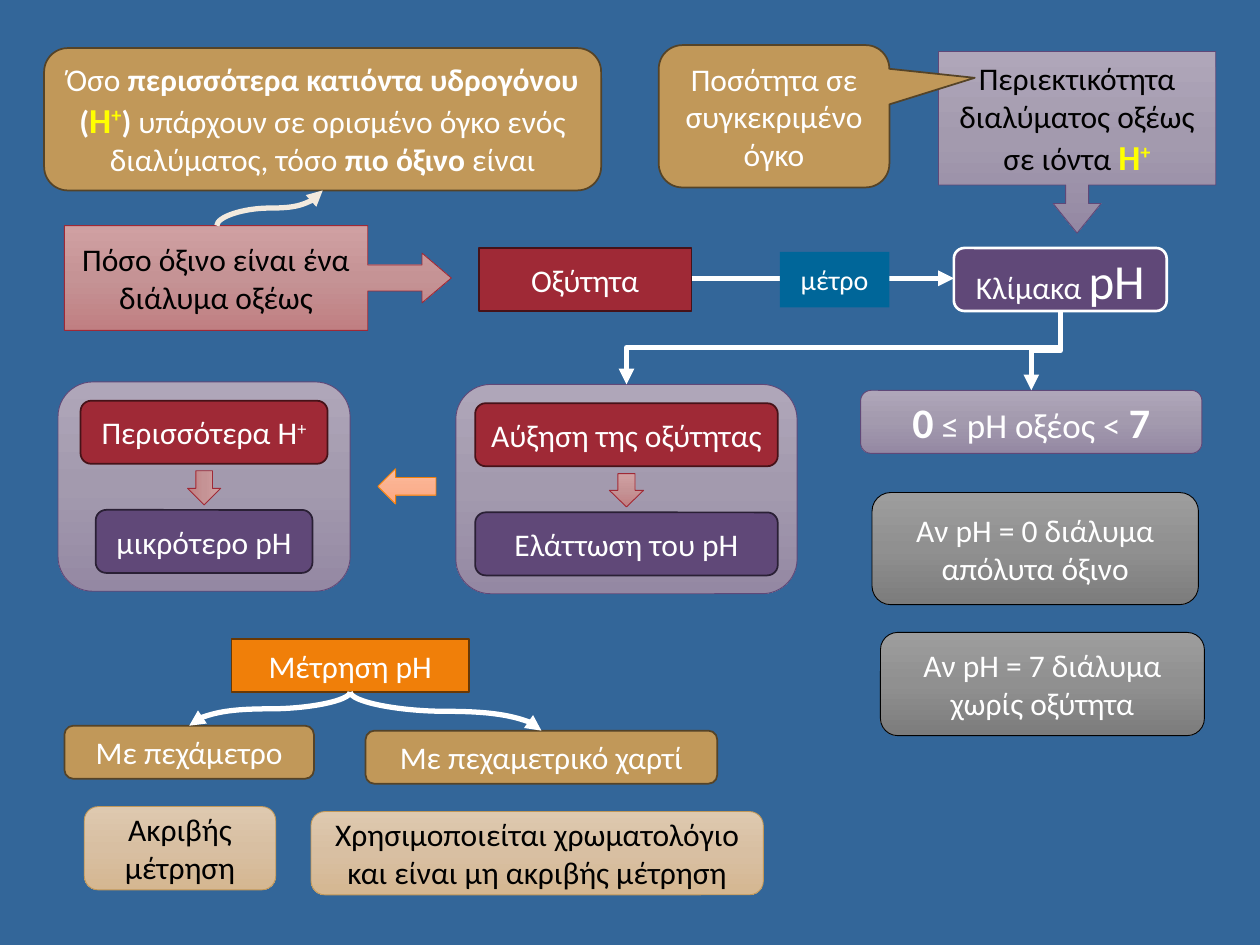
from copy import deepcopy
from dataclasses import dataclass

from lxml.etree import SubElement
from pptx import Presentation
from pptx.dml.color import RGBColor
from pptx.enum.shapes import MSO_CONNECTOR, MSO_SHAPE
from pptx.enum.text import MSO_ANCHOR, PP_ALIGN
from pptx.oxml.ns import qn
from pptx.util import Cm, Pt

WHITE, BLACK, YELLOW = "FFFFFF", "000000", "FFFF00"

# Each style is (fill, line colour, line width); a tuple as fill is a gradient.
RED = ("9F2936", "461218", 1)
PURPLE = ("604878", "2A2035", 1)
OUTLINED_PURPLE = ("604878", WHITE, 1.5)
TAN = ("C19859", "554327", 1)
ORANGE = ("F07F09", "693804", 1)
BLUE = ("006699", None, 0)
PALE_RED = (("D0A0A2", "C59395", "C07F82"), "9F2936", 0.5)
PALE_PURPLE = (("AFA6B9", "A39AAE", "9488A3"), "604878", 0.5)
PALE_ORANGE = (("FDBC9E", "FBB190", "FFA67C"), "F07F09", 0.5)
PALE_TAN = (("DEC9AF", "D8BFA2", "D5B791"), "C19859", 0.5)
GREY = (("9D9D9D", "909090", "7C7C7C"), BLACK, 0.5)


@dataclass
class Box:
    """Place and size in centimetres."""
    left: float
    top: float
    width: float
    height: float

    def inside(self, left, top, width, height):
        return Box(self.left + left, self.top + top, width, height)

    def centred(self, top, width, height):
        return self.inside((self.width - width) / 2, top, width, height)

    @property
    def top_middle(self):
        return self.left + self.width / 2, self.top

    @property
    def bottom_middle(self):
        return self.left + self.width / 2, self.top + self.height


@dataclass
class Run:
    text: str
    size: float = 18
    color: str = WHITE
    bold: bool = False
    raised: bool = False


def rgb(color):
    return RGBColor.from_string(color)


def paint(shape, style):
    fill, line_color, line_width = style
    if isinstance(fill, str):
        shape.fill.solid()
        shape.fill.fore_color.rgb = rgb(fill)
    else:
        shape.fill.gradient()
        shape.fill.gradient_angle = 270
        stop_list = shape._element.spPr.find(".//" + qn("a:gsLst"))
        stop_list.append(deepcopy(stop_list[-1]))
        for stop, color, position in zip(shape.fill.gradient_stops, fill, (0, 0.5, 1)):
            stop.color.rgb = rgb(color)
            stop.position = position
    if line_color:
        shape.line.color.rgb = rgb(line_color)
        shape.line.width = Pt(line_width)
    else:
        shape.line.fill.background()


def add_node(slide, kind, box, style, *runs, adjustments=(), flipped=False):
    shape = slide.shapes.add_shape(
        kind, Cm(box.left), Cm(box.top), Cm(box.width), Cm(box.height))
    shape.shadow.inherit = False
    paint(shape, style)
    for index, value in enumerate(adjustments):
        shape.adjustments[index] = value
    if flipped:
        shape._element.spPr.xfrm.set("flipH", "1")
    frame = shape.text_frame
    frame.word_wrap = True
    frame.vertical_anchor = MSO_ANCHOR.MIDDLE
    paragraph = frame.paragraphs[0]
    paragraph.alignment = PP_ALIGN.CENTER
    for part in runs:
        run = paragraph.add_run()
        run.text = part.text
        run.font.name = "Calibri"
        run.font.size = Pt(part.size)
        run.font.bold = part.bold
        run.font.color.rgb = rgb(part.color)
        if part.raised:
            run._r.get_or_add_rPr().set("baseline", "30000")
    return shape


def add_arrow(slide, kind, start, end, color=WHITE):
    """Join two points; curves and elbows leave and arrive vertically."""
    (x1, y1), (x2, y2) = start, end
    turned = kind != MSO_CONNECTOR.STRAIGHT
    if turned:
        # A quarter turn swaps the axes around the midpoint.
        middle_x, middle_y = (x1 + x2) / 2, (y1 + y2) / 2
        half_width, half_height = (y2 - y1) / 2, (x1 - x2) / 2
        x1, x2 = middle_x - half_width, middle_x + half_width
        y1, y2 = middle_y - half_height, middle_y + half_height
    connector = slide.shapes.add_connector(kind, Cm(x1), Cm(y1), Cm(x2), Cm(y2))
    properties = connector._element.spPr
    if turned:
        properties.xfrm.set("rot", "5400000")
    connector.line.color.rgb = rgb(color)
    connector.line.width = Pt(3)
    SubElement(connector.line._get_or_add_ln(), qn("a:tailEnd"), type="triangle")
    SubElement(properties, qn("a:effectLst"))


def add_acidity(slide, box):
    note = box.inside(0, 0, 11.23, 2.87)
    add_node(slide, MSO_SHAPE.ROUNDED_RECTANGLE, note, TAN,
             Run("Όσο "), Run("περισσότερα κατιόντα υδρογόνου (", bold=True),
             Run("Η", 20, YELLOW, True), Run("+", 20, YELLOW, True, True),
             Run(") ", bold=True),
             Run("υπάρχουν σε ορισμένο όγκο ενός διαλύματος, τόσο "),
             Run("πιο όξινο ", bold=True), Run("είναι"))
    question = box.inside(0.41, 3.58, 7.8, 2.11)
    add_node(slide, MSO_SHAPE.LEFT_ARROW_CALLOUT, question, PALE_RED,
             Run("Πόσο όξινο είναι ένα διάλυμα οξέως", color=BLACK),
             adjustments=(0.249, 0.237, 0.28, 0.784), flipped=True)
    add_node(slide, MSO_SHAPE.RECTANGLE, box.inside(8.76, 4.03, 4.29, 1.27), RED,
             Run("Οξύτητα"))
    add_arrow(slide, MSO_CONNECTOR.CURVE, (question.left + 3.07, question.top),
              note.bottom_middle, "F3EADE")


def add_scale(slide, box):
    """Draw the pH scale with its measure and callouts; return the scale's box."""
    add_node(slide, MSO_SHAPE.DOWN_ARROW_CALLOUT, box.inside(5.64, 0.13, 5.59, 3.66),
             PALE_PURPLE,
             Run("Περιεκτικότητα διαλύματος οξέως σε ιόντα ", color=BLACK),
             Run("Η", 20, YELLOW, True), Run("+", 20, YELLOW, True, True),
             adjustments=(0.126, 0.132, 0.163, 0.735), flipped=True)
    add_node(slide, MSO_SHAPE.ROUNDED_RECTANGULAR_CALLOUT, box.inside(0, 0, 4.65, 2.87),
             TAN, Run("Ποσότητα σε συγκεκριμένο όγκο"),
             adjustments=(0.87, -0.27, 0.167))
    scale = box.inside(5.95, 4.09, 4.29, 1.27)
    add_node(slide, MSO_SHAPE.ROUNDED_RECTANGLE, scale, OUTLINED_PURPLE,
             Run("Κλίμακα "), Run("pH", 28))
    line_y = box.top + 4.7
    add_arrow(slide, MSO_CONNECTOR.STRAIGHT, (box.left + 0.66, line_y), (scale.left, line_y))
    add_node(slide, MSO_SHAPE.RECTANGLE, box.inside(2.44, 4.17, 2.21, 1.12), BLUE,
             Run("μέτρο", 16))
    return scale


def add_change_panel(slide, box, cause, cause_width, effect, effect_width,
                     arrow_kind, rotation=0):
    """Draw a cause above its effect, with an arrow between them."""
    rounded = MSO_SHAPE.ROUNDED_RECTANGLE
    add_node(slide, rounded, box, PALE_PURPLE)
    add_node(slide, rounded, box.centred(0.38, cause_width, 1.27), RED, *cause)
    arrow = add_node(slide, arrow_kind, box.centred(1.8, 0.69, 0.67), PALE_RED)
    arrow.rotation = rotation
    add_node(slide, rounded, box.centred(2.58, effect_width, 1.27), PURPLE, effect)


def add_range(slide, box):
    rounded = MSO_SHAPE.ROUNDED_RECTANGLE
    add_node(slide, rounded, box.inside(0, 0, 6.88, 1.27), PALE_PURPLE,
             Run("0", 24, bold=True), Run(" ≤ pH οξέος < ", 20), Run("7", 24, bold=True))
    add_node(slide, rounded, box.inside(0.23, 2.06, 6.58, 2.26), GREY,
             Run("Αν pH = 0 διάλυμα απόλυτα όξινο"))
    add_node(slide, rounded, box.inside(0.4, 4.88, 6.53, 2.08), GREY,
             Run("Αν pH = 7 διάλυμα χωρίς οξύτητα"))


def add_measuring(slide, box):
    heading = box.inside(3.37, 0, 4.78, 1.07)
    add_node(slide, MSO_SHAPE.RECTANGLE, heading, ORANGE, Run("Μέτρηση pH"))
    methods = (
        (box.inside(0, 1.75, 5.03, 1.07), "Με πεχάμετρο", 0.4, 3.86, "Ακριβής μέτρηση"),
        (box.inside(6.07, 1.85, 7.09, 1.07), "Με πεχαμετρικό χαρτί", -1.1, 9.12,
         "Χρησιμοποιείται χρωματολόγιο και είναι μη ακριβής μέτρηση"),
    )
    for method, name, note_left, note_width, note in methods:
        add_node(slide, MSO_SHAPE.ROUNDED_RECTANGLE, method, TAN, Run(name))
        add_node(slide, MSO_SHAPE.ROUNDED_RECTANGLE,
                 method.inside(note_left, 1.63, note_width, 1.68), PALE_TAN,
                 Run(note, color=BLACK))
        add_arrow(slide, MSO_CONNECTOR.CURVE, heading.bottom_middle, method.top_middle)


def main():
    presentation = Presentation()
    presentation.slide_width, presentation.slide_height = Cm(25.4), Cm(19.05)
    slide = presentation.slides.add_slide(presentation.slide_layouts[6])
    slide.background.fill.solid()
    slide.background.fill.fore_color.rgb = rgb("336699")

    add_acidity(slide, Box(0.89, 0.97, 13.05, 5.7))
    scale = add_scale(slide, Box(13.28, 0.91, 11.23, 5.36))
    rise = Box(9.19, 7.75, 6.88, 4.22)
    add_change_panel(slide, rise, [Run("Αύξηση της οξύτητας")], 6.1,
                     Run("Ελάττωση του pH"), 6.1, MSO_SHAPE.DOWN_ARROW)
    add_change_panel(slide, Box(1.17, 7.7, 5.89, 4.22),
                     [Run("Περισσότερα Η"), Run("+", raised=True)], 4.98,
                     Run("μικρότερο pH"), 4.37, MSO_SHAPE.RIGHT_ARROW, 90)
    add_node(slide, MSO_SHAPE.LEFT_ARROW, Box(7.62, 9.45, 1.17, 0.71), PALE_ORANGE)
    acid_range = Box(17.35, 7.87, 6.88, 6.96)
    add_range(slide, acid_range)
    for target in (acid_range, rise):
        add_arrow(slide, MSO_CONNECTOR.ELBOW, scale.bottom_middle, target.top_middle)
    add_measuring(slide, Box(1.3, 12.88, 14.1, 5.2))
    presentation.save("out.pptx")


if __name__ == "__main__":
    main()
